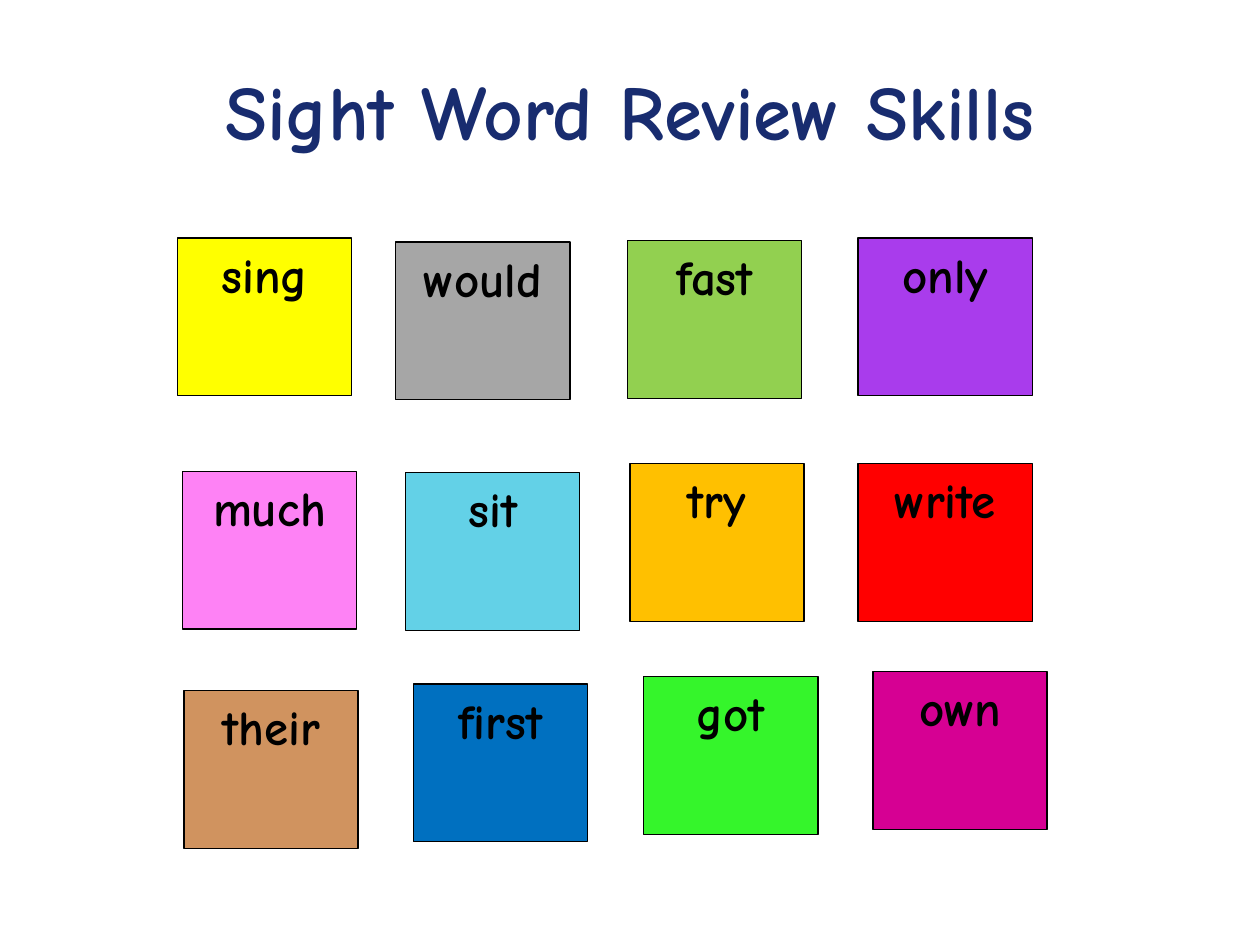
from pptx import Presentation
from pptx import util as u
from pptx.dml.color import RGBColor
from pptx.enum import shapes, text


def color(hex_code):
    return RGBColor.from_string(hex_code)


class WordSlide:
    font_name = "Comic Neue"
    title_color = "182C6F"
    ink = "000000"
    card_width, card_height = u.Cm(3.51), u.Cm(3.18)

    def __init__(self, deck):
        self.slide = deck.slides.add_slide(deck.slide_layouts[6])

    def lettering(self, frame, wording, size, hex_code, anchor):
        frame.word_wrap = True
        frame.vertical_anchor = anchor
        paragraph = frame.paragraphs[0]
        paragraph.text = wording
        paragraph.alignment = text.PP_ALIGN.CENTER
        font = paragraph.font
        font.name, font.size, font.bold = self.font_name, u.Pt(size), True
        font.color.rgb = color(hex_code)
        return paragraph

    def title(self, wording, left, top, width, height):
        heading = self.slide.shapes.add_textbox(
            u.Cm(left), u.Cm(top), u.Cm(width), u.Cm(height))
        paragraph = self.lettering(heading.text_frame, wording, 44,
                                   self.title_color, text.MSO_ANCHOR.MIDDLE)
        paragraph.line_spacing = 1.15
        paragraph.space_after = u.Pt(10)

    def card(self, word, fill, left, top):
        card = self.slide.shapes.add_shape(
            shapes.MSO_SHAPE.RECTANGLE, u.Cm(left), u.Cm(top),
            self.card_width, self.card_height)
        card.shadow.inherit = False
        card.fill.solid()
        card.fill.fore_color.rgb = color(fill)
        card.line.color.rgb = color(self.ink)
        card.line.width = u.Pt(0.75)
        self.lettering(card.text_frame, word, 28, self.ink,
                       text.MSO_ANCHOR.TOP)


# Word cards, row by row: word, fill, left and top in cm (loosely scattered)
WORD_CARDS = [
    ("sing", "FFFF00", 3.58, 4.8),
    ("would", "A6A6A6", 7.98, 4.88),
    ("fast", "92D050", 12.65, 4.85),
    ("only", "A93CEC", 17.3, 4.8),
    ("much", "FE82F5", 3.68, 9.5),
    ("sit", "63D1E7", 8.18, 9.53),
    ("try", "FFC000", 12.7, 9.35),
    ("write", "FF0000", 17.3, 9.35),
    ("their", "D0935F", 3.71, 13.92),
    ("first", "0070C0", 8.33, 13.79),
    ("got", "35F52B", 12.98, 13.64),
    ("own", "D60093", 17.6, 13.54),
]


def main():
    deck = Presentation()
    deck.slide_width, deck.slide_height = u.Cm(25.4), u.Cm(19.05)
    review = WordSlide(deck)

    # Heading
    review.title("Sight Word Review Skills", 1.27, 0.76, 22.86, 2.64)

    # Cards
    for word_card in WORD_CARDS:
        review.card(*word_card)

    deck.save("out.pptx")


if __name__ == "__main__":
    main()
